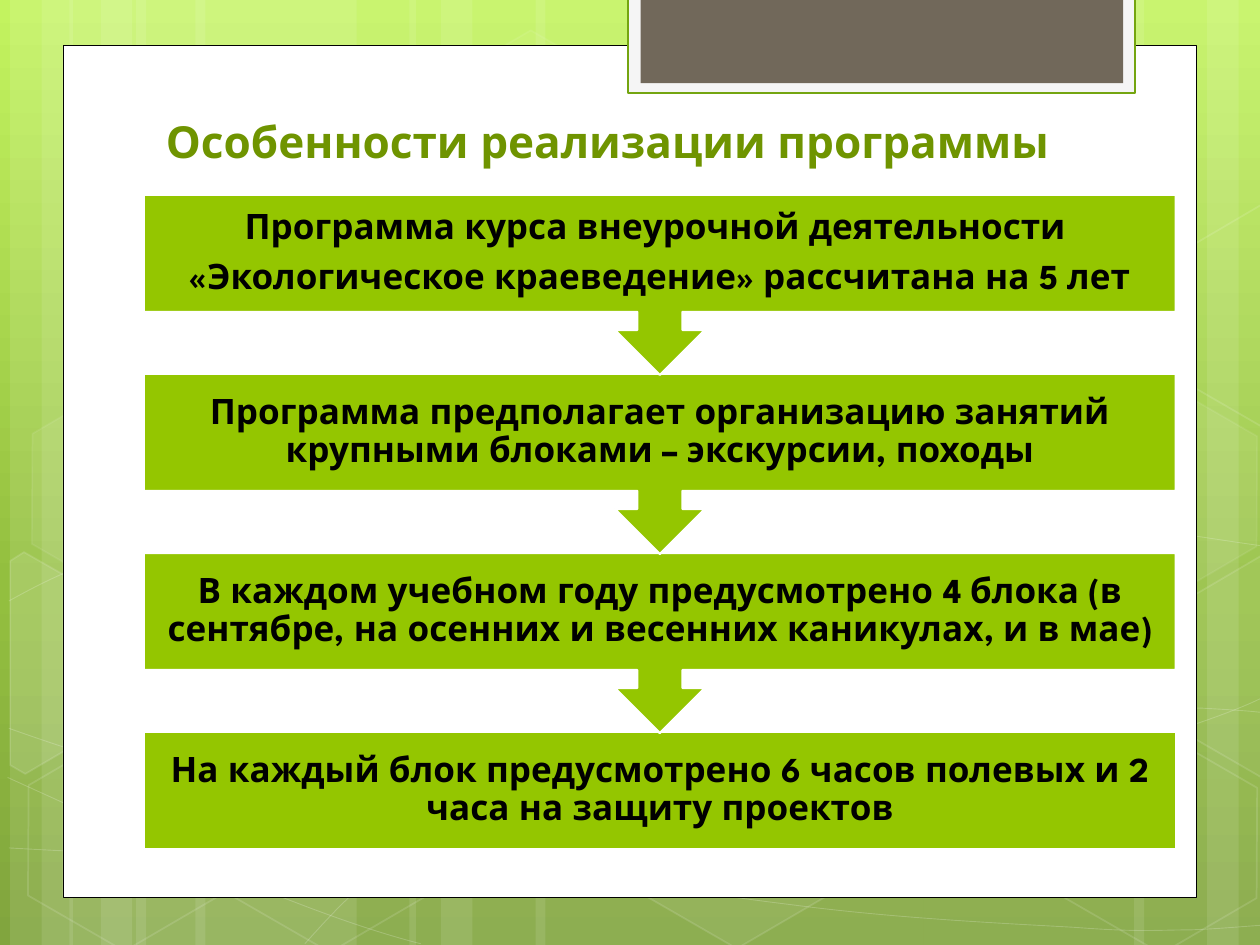
from dataclasses import dataclass
from copy import deepcopy
from math import cos, radians, sin
from lxml.etree import SubElement
from pptx import Presentation
from pptx.dml.color import RGBColor
from pptx.enum.shapes import MSO_SHAPE
from pptx.enum.text import MSO_ANCHOR, PP_ALIGN
from pptx.oxml.ns import qn
from pptx.util import Inches, Pt


@dataclass(frozen=True)
class Theme:
    font: str = "League Spartan"
    white: str = "FFFFFF"
    black: str = "000000"
    lime: str = "94C600"
    olive: str = "6F9400"
    edge: str = "74A510"
    pale: str = "F5F5F5"
    taupe: str = "71685A"
    sky: tuple = ((0, "C3F35F"), (0.62, "93BF3F"), (1, "81A53E"))
    head: float = 25.2
    body: float = 20
    tilt: float = 30


class Deck:
    COLS = 100

    def __init__(self, theme):
        self.theme = theme
        self.prs = Presentation()
        self.prs.slide_width = Inches(10)
        self.prs.slide_height = Inches(7.5)
        self.unit = self.prs.slide_width / self.COLS
        self.slide = self.prs.slides.add_slide(self.prs.slide_layouts[6])

    def grid(self, *cells):
        return [round(cell * self.unit) for cell in cells]

    def sky(self):
        fill = self.slide.background.fill
        fill.gradient()
        fill.gradient_angle = 270
        stops = next(self.slide.element.iter(qn("a:gsLst")))
        stops.append(deepcopy(stops[0]))
        for stop, (place, hue) in zip(fill.gradient_stops, self.theme.sky):
            stop.position = place
            stop.color.rgb = RGBColor.from_string(hue)

    def fade(self, node, share):
        hue = node.find(qn("a:solidFill")).find(qn("a:srgbClr"))
        SubElement(hue, qn("a:alpha")).set("val", str(share * 1000))

    def paint(self, shape, fill=None, line=None, width=1, veil=100, haze=100):
        shape.shadow.inherit = False
        props = shape.element.spPr
        if fill:
            shape.fill.solid()
            shape.fill.fore_color.rgb = RGBColor.from_string(fill)
            if veil < 100:
                self.fade(props, veil)
        else:
            shape.fill.background()
        if line:
            shape.line.color.rgb = RGBColor.from_string(line)
            shape.line.width = Pt(width)
            if haze < 100:
                self.fade(props.find(qn("a:ln")), haze)
        else:
            shape.line.fill.background()

    def block(self, box, kind=MSO_SHAPE.RECTANGLE, turn=0, **look):
        shape = self.slide.shapes.add_shape(kind, *self.grid(*box))
        shape.rotation = turn
        self.paint(shape, **look)
        return shape

    def hexagon(self, left, top, veil, haze):
        fill = self.theme.white if veil else None
        shape = self.block((left, top, 17.5, 15.2), MSO_SHAPE.HEXAGON, self.theme.tilt,
                           fill=fill, line=self.theme.white, veil=veil, haze=haze)
        shape.adjustments[0] = 0.285

    def outline(self, points, close, **look):
        spots = [self.grid(*point) for point in points]
        pen = self.slide.shapes.build_freeform(*spots[0])
        pen.add_line_segments(spots[1:], close=close)
        shape = pen.convert_to_shape()
        self.paint(shape, line=self.theme.white, **look)
        return shape

    def shard(self, mid, points, **look):
        turn = radians(self.theme.tilt)
        flat = []
        for x, y in points:
            dx, dy = x - mid[0], y - mid[1]
            flat.append((mid[0] + dx * cos(turn) + dy * sin(turn),
                         mid[1] - dx * sin(turn) + dy * cos(turn)))
        self.outline(flat, True, haze=12, **look).rotation = self.theme.tilt

    def curve(self, knots):
        shape = self.outline(knots, False, width=0.5, haze=20)
        legs = list(shape.element.iter(qn("a:lnTo")))
        for i in range(0, len(legs), 3):
            home = legs[i].getparent()
            bend = SubElement(home, qn("a:cubicBezTo"))
            for leg in legs[i:i + 3]:
                bend.append(leg[0])
                home.remove(leg)

    def text(self, box, lines, size, hue, anchor, pads=(0.1, 0.05), gap=0, lead=1):
        frame = self.slide.shapes.add_textbox(*self.grid(*box)).text_frame
        frame.word_wrap = True
        frame.vertical_anchor = anchor
        frame.margin_left = frame.margin_right = Inches(pads[0])
        frame.margin_top = frame.margin_bottom = Inches(pads[1])
        for i, line in enumerate(lines):
            para = frame.add_paragraph() if i else frame.paragraphs[0]
            para.alignment = PP_ALIGN.CENTER
            para.line_spacing = lead
            para.space_after = Pt(gap)
            run = para.add_run()
            run.text = line
            run.font.name = self.theme.font
            run.font.size = Pt(size)
            run.font.bold = True
            run.font.color.rgb = RGBColor.from_string(hue)

    def step(self, top, lines, last):
        left, wide, tall = 11.42, 81.9, 9.3
        kind = MSO_SHAPE.RECTANGLE if last else MSO_SHAPE.UP_ARROW_CALLOUT
        self.block((left, top, wide, tall if last else 14.3), kind, 0 if last else 180,
                   fill=self.theme.lime, line=self.theme.white, width=1.25)
        self.text((left, top, wide, tall), lines, self.theme.body, self.theme.black,
                  MSO_ANCHOR.MIDDLE, (0.16, 0.16), 7, 0.9)


BANDS = [(10.8, 17.5, 0), (0.8, 5, 0), (3.3, 8.3, 0), (15.5, 17.5, 0), (5.5, 5, 0),
         (8, 8.3, 0), (73.3, 17.5, 180), (95.8, 5, 180), (90, 8.3, 180), (42.5, 30.8, 0),
         (32.5, 5, 0), (35, 8.3, 0)]
CURVES = [
    [(0.7, 67.3), (6.1, 67.6), (11.5, 67.9), (19, 67.8), (26.5, 67.7), (35.8, 67.5),
     (45.8, 66.5), (55.8, 65.5), (70, 63.6), (79.2, 61.7), (88.3, 59.8), (97.7, 56.8),
     (100.7, 55.1)],
    [(0.7, 47.7), (3.6, 46.1), (6.5, 44.6), (12.1, 43.1), (17.8, 41.6), (25.9, 39.4),
     (34.7, 38.7), (43.6, 38), (54.4, 37.9), (65.4, 38.7), (76.4, 39.5), (94.7, 42.6),
     (100.7, 43.4)],
    [(0.6, 61.7), (12.7, 67.2), (24.7, 72.7), (33.4, 74.9)],
    [(0.7, 57.8), (3.8, 58.9), (7, 60), (12.8, 61.6), (18.6, 63.1), (27.3, 65.6),
     (35.7, 67.3), (44, 69), (54.5, 70.8), (62.8, 71.8), (71.1, 72.9), (80, 73.3),
     (85.3, 73.6), (90.5, 74), (91.9, 73.8), (94.5, 73.8), (97.1, 73.7), (98.9, 73.5),
     (100.7, 73.4)],
    [(24.2, 74.9), (26, 72.9), (27.8, 70.9), (30.2, 69.1), (32.6, 67.3), (36, 65.3),
     (38.8, 63.9), (41.6, 62.5), (43.3, 61.9), (47, 60.9), (50.6, 59.9), (57.3, 58.5),
     (60.8, 57.8), (64.4, 57.1), (64.9, 57.1), (68, 56.9), (71.1, 56.6), (76, 56.3),
     (79.4, 56.2), (82.9, 56.1), (88.6, 56.2), (88.6, 56.2), (90.8, 56.2), (93.1, 56.2),
     (95.3, 56.2), (97.1, 56.3), (98.8, 56.4), (99.7, 56.5), (100.6, 56.6), (100.3, 56.5),
     (100.6, 56.6)],
]
FRONT = [(33.4, 3.6, 4, 8), (49.7, 58.9, 6, 12)]
CELLS = [(1.1, 59.1, 0, 12), (1.4, 31.2, 7, 8), (17.4, 59.2, 0, 12),
         (75.3, 45.3, 10, 12), (83.4, 59.3, 0, 12), (83.4, 31.4, 7, 8)]
LEFT = [(0.8, 44.5), (1.9, 43.8), (9.6, 48.2), (9.5, 57), (2, 61.4), (0.8, 60.7)]
RIGHT = [(92.6, 48.5), (100.1, 44.1), (100.9, 44.6), (100.9, 61.3), (100.2, 61.7), (92.6, 57.3)]
RISE = 27.85
STEPS = [
    ["Программа курса внеурочной деятельности ",
     "«Экологическое краеведение» рассчитана на 5 лет"],
    ["Программа предполагает организацию занятий крупными блоками – экскурсии, походы"],
    ["В каждом учебном году предусмотрено 4 блока (в сентябре, на осенних и весенних "
     "каникулах, и в мае) "],
    ["На каждый блок предусмотрено 6 часов полевых и 2 часа на защиту проектов"],
]


def main():
    theme = Theme()
    deck = Deck(theme)
    deck.sky()
    for left, wide, turn in BANDS:
        deck.block((left, 0, wide, 75), turn=turn, fill=theme.white, veil=10)
    for knots in CURVES:
        deck.curve(knots)
    for cell in FRONT:
        deck.hexagon(*cell)
    deck.shard((3.6, 53.5), LEFT, fill=theme.white, veil=10)
    for cell in CELLS:
        deck.hexagon(*cell)
    deck.shard((98.5, 52), RIGHT, fill=theme.white, veil=4)
    deck.shard((98.5, 52 - RISE), [(x, y - RISE) for x, y in RIGHT])

    deck.block((5, 3.6, 90, 67.65), fill=theme.white, line=theme.black, width=0.5)
    deck.block((49.86, -0.2, 40.2, 7.6), fill=theme.pale, line=theme.edge, width=1.25)
    deck.block((50.84, -0.2, 38.3, 6.8), fill=theme.taupe)
    deck.text((9.82, 3.65, 76.8, 10.1), ["Особенности реализации программы"],
              theme.head, theme.olive, MSO_ANCHOR.BOTTOM)
    final = len(STEPS) - 1
    for i in range(final, -1, -1):
        deck.step(15.46 + 14.21 * i, STEPS[i], i == final)
    deck.prs.save("out.pptx")


if __name__ == "__main__":
    main()
